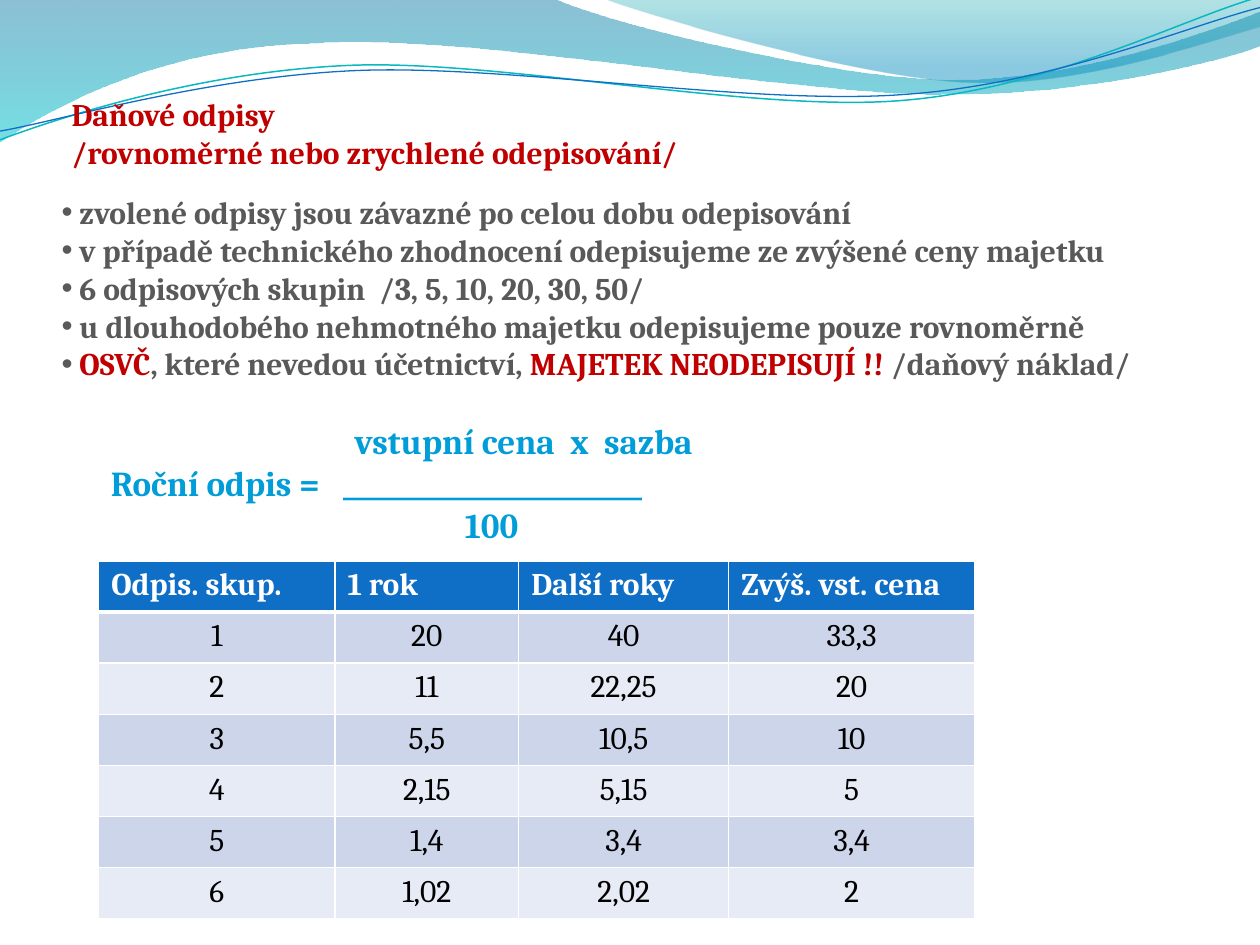
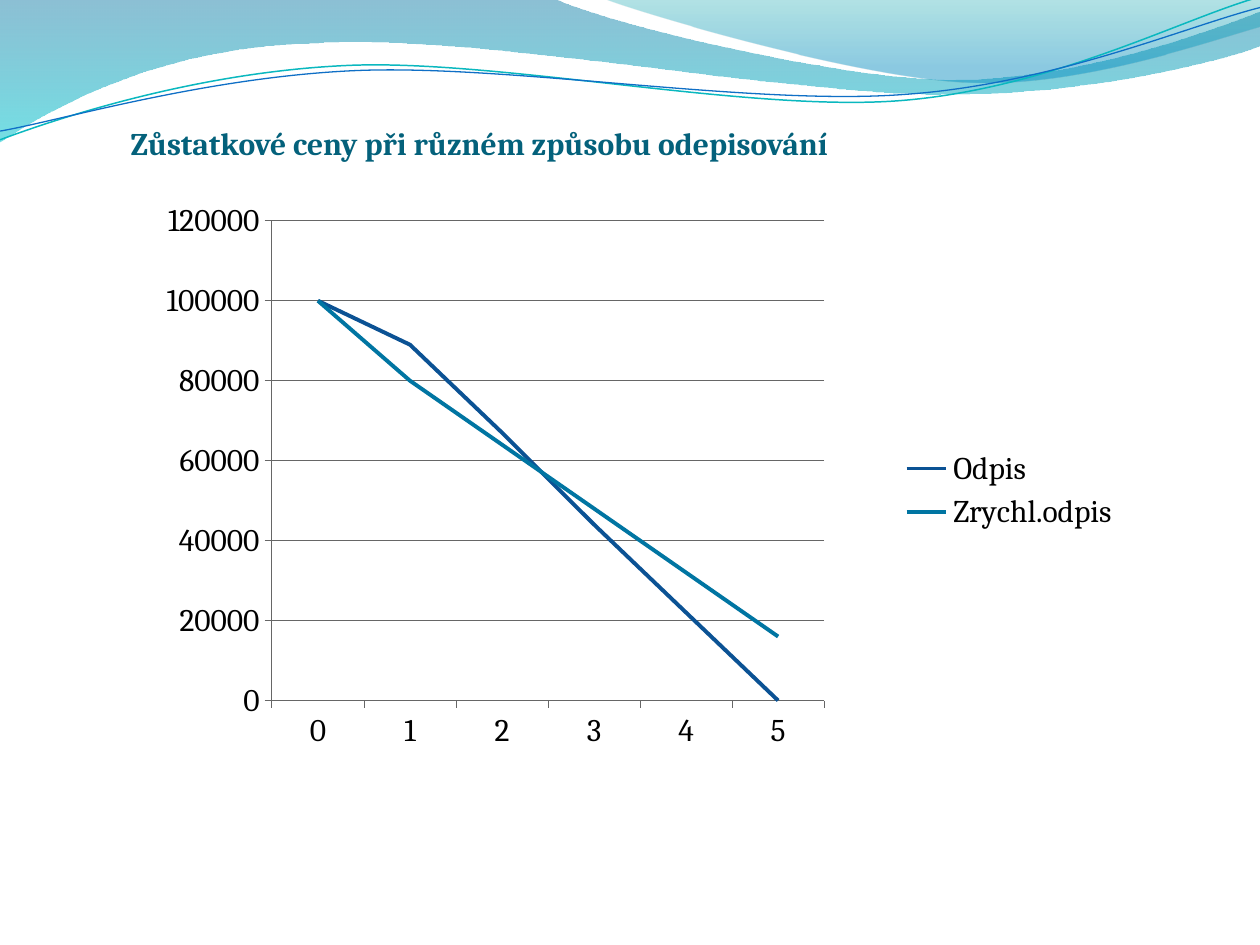
from dataclasses import dataclass

from lxml import etree
from pptx import Presentation
from pptx.chart.data import CategoryChartData
from pptx.dml.color import RGBColor
from pptx.enum.chart import XL_CHART_TYPE, XL_LEGEND_POSITION, XL_TICK_MARK
from pptx.enum.text import PP_ALIGN
from pptx.oxml import parse_xml
from pptx.oxml.ns import nsdecls, qn
from pptx.util import Pt

LINE = XL_CHART_TYPE.LINE
LEGEND_RIGHT = XL_LEGEND_POSITION.RIGHT
TICK_OUTSIDE = XL_TICK_MARK.OUTSIDE
CENTER = PP_ALIGN.CENTER


@dataclass(frozen=True)
class Theme:
    font: str = "Cambria"
    body: float = 18
    formula: float = 20
    red: str = "C00000"
    grey: str = "595959"
    heading: str = "04617B"
    accent: str = "009DD9"
    blue: str = "0F6FC6"
    teal: str = "0AB8BF"
    white: str = "FFFFFF"
    black: str = "000000"
    band_dark: str = "CCD5EA"
    band_light: str = "E7EBF5"
    axis: str = "666666"
    series: tuple = ("0B5294", "0075A2")


THEME = Theme()


@dataclass(frozen=True)
class Stop:
    position: float
    color: str
    alpha: int


@dataclass(frozen=True)
class Wave:
    start: tuple
    segments: tuple
    stops: tuple = ()
    line: str = ""
    width: float = 0


@dataclass(frozen=True)
class Run:
    text: str
    color: str
    size: float = THEME.body
    bold: bool = True


@dataclass(frozen=True)
class Para:
    runs: tuple
    left: float = 0
    bullet: bool = False


@dataclass(frozen=True)
class Box:
    left: float
    top: float
    width: float
    height: float

    def emu(self) -> tuple:
        return Pt(self.left), Pt(self.top), Pt(self.width), Pt(self.height)


WAVES = (
    Wave((0, 0), (
        (316.8, -0.7),
        (342.7, 12.2, 478.1, 45.4, 545.8, 45.4),
        (614.2, 45.4, 689.8, 18.7, 720, 6.5),
        (720.7, 25.9),
        (707.8, 31.7, 626.4, 54.7, 537.1, 54),
        (447.8, 54, 275, 20.2, 185, 24.5),
        (92.9, 25.9, 33.1, 59.8, -0.7, 81.4),
    ), stops=(Stop(0, "0074A1", 45), Stop(1, "00C6CF", 55))),
    Wave((344.9, -0.7), (
        (366.5, 7.9, 491, 44.6, 553.7, 46.8),
        (616.3, 49.7, 691.9, 23, 720, 15.1),
        (720, 0),
    ), stops=(Stop(0, "00A1A9", 30), Stop(0.8, "008BBF", 45))),
    Wave((0, 79.9), (
        (34.6, 67, 113.8, 41, 199.4, 37.4),
        (284.4, 33.8, 427, 64.1, 513.4, 57.6),
        (599.8, 51.1, 675.4, 10.8, 718.6, -1.4),
    ), line=THEME.teal, width=0.85),
    Wave((0, 74.9), (
        (33.8, 69.1, 118.1, 43.9, 203.8, 40.3),
        (290.2, 36.7, 429.8, 60.5, 516.2, 54),
        (601.9, 48.2, 677.5, 15.1, 720, 4.3),
    ), line=THEME.blue, width=0.75),
)

RATES = (
    ("Odpis. skup.", "1 rok", "Další roky", "Zvýš. vst. cena"),
    ("1", "20", "40", "33,3"),
    ("2", "11", "22,25", "20"),
    ("3", "5,5", "10,5", "10"),
    ("4", "2,15", "5,15", "5"),
    ("5", "1,4", "3,4", "3,4"),
    ("6", "1,02", "2,02", "2"),
)
RATE_WIDTHS = (135, 105, 120, 140.6)
RATE_ROW_HEIGHT = 29.2

RESIDUAL_VALUES = {
    "Odpis": (100000, 89000, 67000, 44000, 22000, 0),
    "Zrychl.odpis": (100000, 80000, 64000, 48000, 32000, 16000),
}


def rgb(color: str) -> RGBColor:
    return RGBColor.from_string(color)


def bend_segments(sp, wave: Wave) -> None:
    path = next(sp._element.iter(qn("a:path")))
    for side, segment in zip(path.findall(qn("a:lnTo")), wave.segments):
        if len(segment) == 2:
            continue
        curve = etree.Element(qn("a:cubicBezTo"))
        for x, y in zip(segment[::2], segment[1::2]):
            etree.SubElement(curve, qn("a:pt"),
                             x=str(Pt(x) - sp.left), y=str(Pt(y) - sp.top))
        path.replace(side, curve)


def draw_wave(s, wave: Wave) -> None:
    start, *ends = [(Pt(x), Pt(y)) for x, y in
                    (wave.start, *(segment[-2:] for segment in wave.segments))]
    builder = s.shapes.build_freeform(*start, scale=1.0)
    builder.add_line_segments(ends, close=bool(wave.stops))
    sp = builder.convert_to_shape()
    bend_segments(sp, wave)
    sp.shadow.inherit = False
    if not wave.stops:
        sp.fill.background()
        style_line(sp.line, wave.line, wave.width)
        return
    sp.line.fill.background()
    sp.fill.gradient()
    sp.fill.gradient_angle = 270
    for target, stop in zip(sp.fill.gradient_stops, wave.stops):
        target.position = stop.position
        target.color.rgb = rgb(stop.color)
    colors = sp._element.spPr.iter(qn("a:srgbClr"))
    for color, stop in zip(colors, wave.stops):
        etree.SubElement(color, qn("a:alpha"), val=str(stop.alpha * 1000))


def add_wave_slide(prs):
    s = prs.slides.add_slide(prs.slide_layouts[6])
    for wave in WAVES:
        draw_wave(s, wave)
    return s


def add_run(p, run: Run) -> None:
    r = p.add_run()
    r.text = run.text
    r.font.name = THEME.font
    r.font.size = Pt(run.size)
    r.font.bold = run.bold
    r.font.color.rgb = rgb(run.color)


def add_text(s, box: Box, paras: tuple) -> None:
    tf = s.shapes.add_textbox(*box.emu()).text_frame
    tf.word_wrap = True
    for i, para in enumerate(paras):
        p = tf.add_paragraph() if i else tf.paragraphs[0]
        p_pr = p._p.get_or_add_pPr()
        p_pr.set("marL", str(Pt(para.left)))
        p_pr.set("indent", str(Pt(-para.left) if para.bullet else 0))
        if para.bullet:
            bullet_color = etree.SubElement(p_pr, qn("a:buClr"))
            etree.SubElement(bullet_color, qn("a:srgbClr"), val=THEME.grey)
            etree.SubElement(p_pr, qn("a:buFont"), typeface="Arial")
            etree.SubElement(p_pr, qn("a:buChar"), char="•")
        for run in para.runs:
            add_run(p, run)


def set_borders(cell, bottom: float) -> None:
    tc_pr = cell._tc.get_or_add_tcPr()
    for side, width in (("L", 1), ("R", 1), ("T", 1), ("B", bottom)):
        ln = etree.SubElement(tc_pr, qn(f"a:ln{side}"), w=str(Pt(width)))
        fill = etree.SubElement(ln, qn("a:solidFill"))
        etree.SubElement(fill, qn("a:srgbClr"), val=THEME.white)


def add_rate_table(s, left: float, top: float) -> None:
    box = Box(left, top, sum(RATE_WIDTHS), RATE_ROW_HEIGHT * len(RATES))
    table = s.shapes.add_table(len(RATES), len(RATE_WIDTHS), *box.emu()).table
    table.first_row = table.horz_banding = False
    for column, width in zip(table.columns, RATE_WIDTHS):
        column.width = Pt(width)
    for i, values in enumerate(RATES):
        table.rows[i].height = Pt(RATE_ROW_HEIGHT)
        header = i == 0
        band = THEME.band_dark if i % 2 else THEME.band_light
        for j, value in enumerate(values):
            cell = table.cell(i, j)
            set_borders(cell, 3 if header else 1)
            cell.fill.solid()
            cell.fill.fore_color.rgb = rgb(THEME.blue if header else band)
            p = cell.text_frame.paragraphs[0]
            if not header:
                p.alignment = CENTER
            color = THEME.white if header else THEME.black
            add_run(p, Run(value, color, bold=header))


def set_plot_area(chart, frame: Box, plot: Box) -> None:
    shares = {"x": plot.left / frame.width, "y": plot.top / frame.height,
              "w": plot.width / frame.width, "h": plot.height / frame.height}
    plot_area = chart._chartSpace.chart.plotArea
    for old in plot_area.findall(qn("c:layout")):
        plot_area.remove(old)
    sizes = "".join(f'<c:{key} val="{share}"/>' for key, share in shares.items())
    plot_area.insert(0, parse_xml(
        f'<c:layout {nsdecls("c")}><c:manualLayout><c:layoutTarget val="inner"/>'
        f'<c:xMode val="edge"/><c:yMode val="edge"/>{sizes}'
        "</c:manualLayout></c:layout>"))


def style_line(line, color: str, width: float) -> None:
    line.color.rgb = rgb(color)
    line.width = Pt(width)


def add_value_chart(s, box: Box, plot_box: Box) -> None:
    data = CategoryChartData()
    data.categories = [str(year) for year in range(6)]
    for name, values in RESIDUAL_VALUES.items():
        data.add_series(name, values)
    chart = s.shapes.add_chart(LINE, *box.emu(), data).chart
    chart.has_title = False
    chart.font.name = THEME.font
    chart.font.size = Pt(THEME.body)
    chart.font.color.rgb = rgb(THEME.black)
    chart.has_legend = True
    chart.legend.position = LEGEND_RIGHT
    chart.legend.include_in_layout = False
    set_plot_area(chart, box, plot_box)
    for axis in (chart.category_axis, chart.value_axis):
        axis.major_tick_mark = TICK_OUTSIDE
        style_line(axis.format.line, THEME.axis, 0.5)
    chart.category_axis.has_major_gridlines = False
    values = chart.value_axis
    values.minimum_scale, values.maximum_scale = 0, 120000
    values.major_unit = 20000
    values.has_major_gridlines = True
    style_line(values.major_gridlines.format.line, THEME.axis, 0.5)
    plot = chart.plots[0]
    plot.vary_by_categories = False
    for series, color in zip(plot.series, THEME.series):
        series.smooth = False
        style_line(series.format.line, color, 2.25)


def bullet(*runs: Run) -> Para:
    return Para(runs, left=10.2, bullet=True)


def formula(text: str, left: float = 0) -> Para:
    return Para((Run(text, THEME.accent, THEME.formula),), left=left)


def build_tax_slide(prs) -> None:
    s = add_wave_slide(prs)
    title = ("Daňové odpisy", "/rovnoměrné nebo zrychlené odepisování/")
    add_text(s, Box(33.8, 50.8, 378, 51.1),
             tuple(Para((Run(text, THEME.red),)) for text in title))
    rules = (
        "zvolené odpisy jsou závazné po celou dobu odepisování",
        "v případě technického zhodnocení odepisujeme ze zvýšené ceny majetku",
        "6 odpisových skupin  /3, 5, 10, 20, 30, 50/",
        "u dlouhodobého nehmotného majetku odepisujeme pouze rovnoměrně",
    )
    add_text(s, Box(28.1, 106.8, 670.3, 116.6), (
        *(bullet(Run(text, THEME.grey)) for text in rules),
        bullet(Run("OSVČ", THEME.red),
               Run(", které nevedou účetnictví, ", THEME.grey),
               Run("MAJETEK NEODEPISUJÍ !! ", THEME.red),
               Run("/daňový náklad/", THEME.grey)),
    ))
    add_rate_table(s, 56.4, 320.6)
    add_text(s, Box(56.2, 236.2, 389.5, 79.9), (
        formula("vstupní cena  x  sazba", left=139.4),
        formula("Roční odpis =   " + "_" * 23),
        formula("100", left=202.4),
    ))


def build_chart_slide(prs) -> None:
    s = add_wave_slide(prs)
    add_value_chart(s, Box(73.4, 110.2, 573.8, 339.8), Box(82, 16, 315.6, 274.2))
    add_text(s, Box(67.6, 67.2, 435.6, 28.8), (
        Para((Run("Zůstatkové ceny při různém způsobu odepisování", THEME.heading),)),
    ))


def main() -> None:
    prs = Presentation()
    prs.slide_width, prs.slide_height = Pt(720), Pt(540)
    build_tax_slide(prs)
    build_chart_slide(prs)
    prs.save("out.pptx")


if __name__ == "__main__":
    main()
